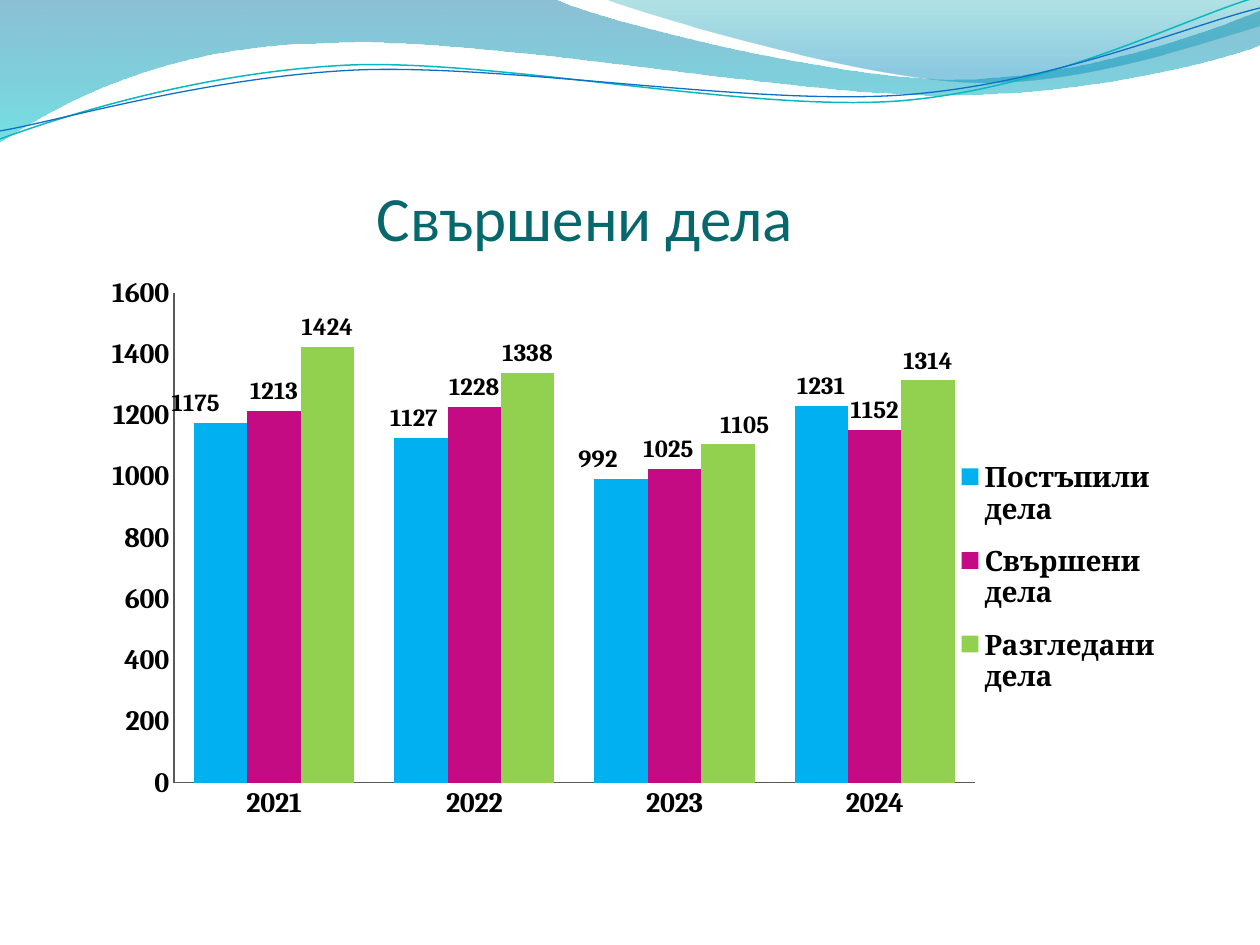
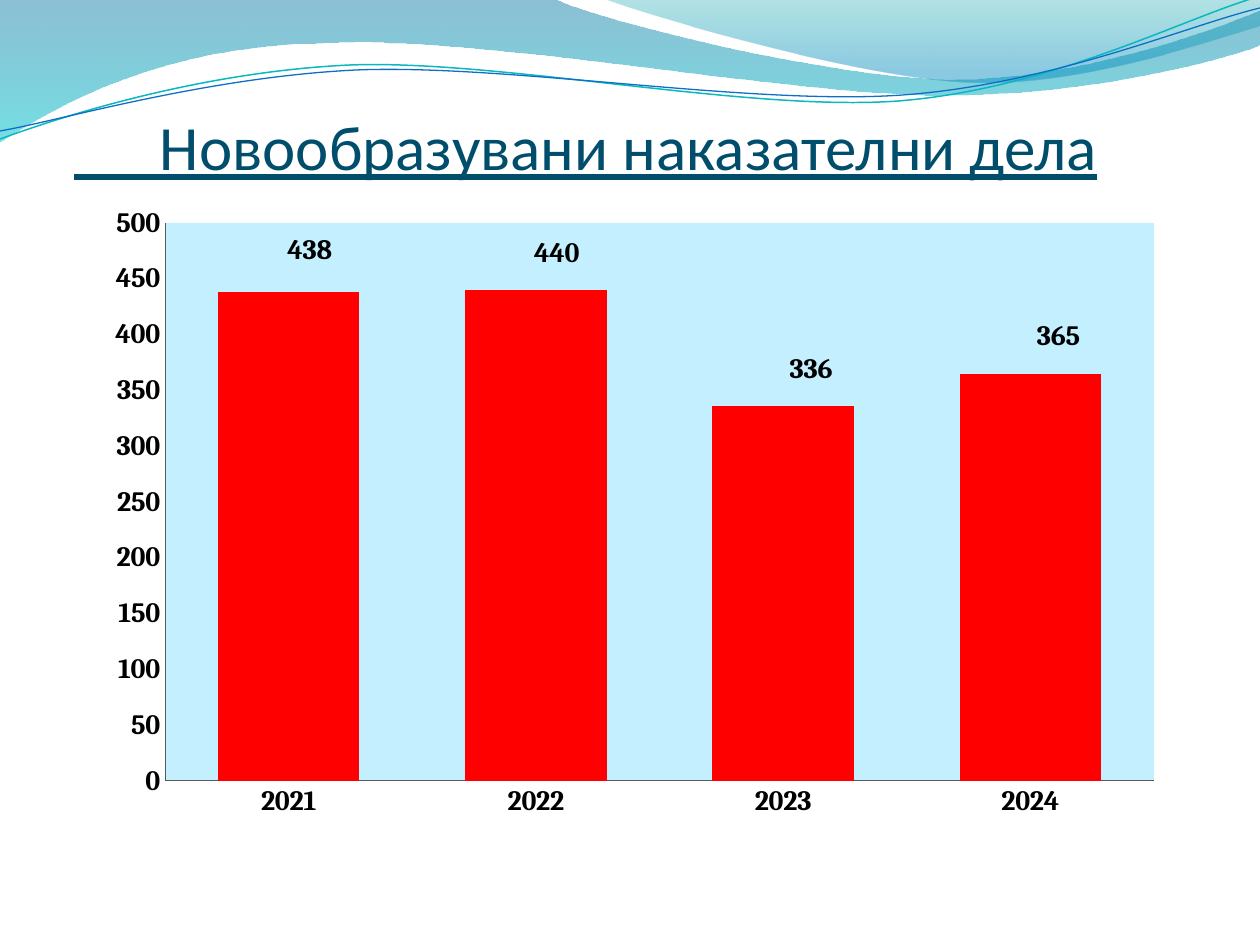
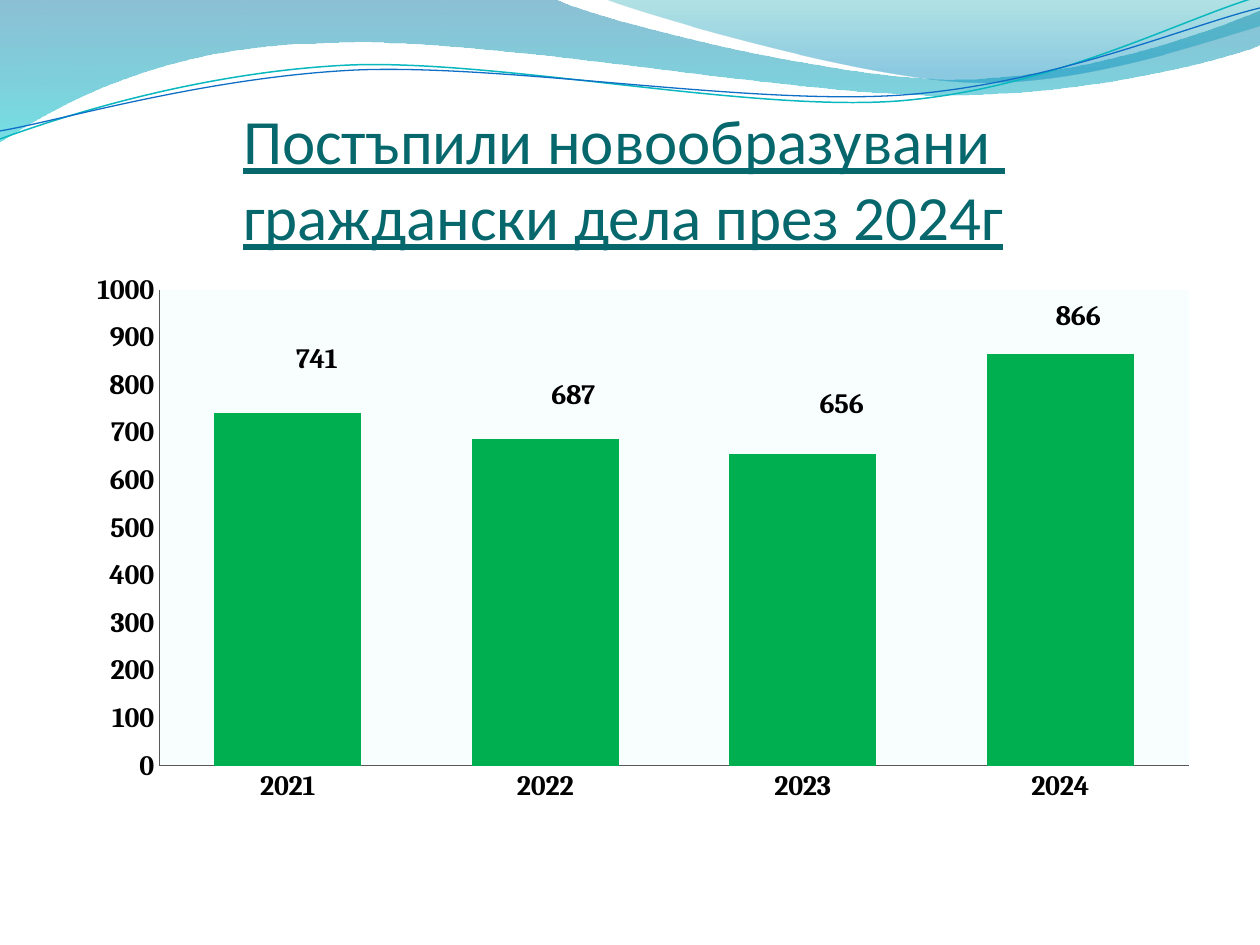
"""Build three slides of court case statistics under a shared wave header."""
from dataclasses import dataclass, field

from lxml import etree
from pptx import Presentation
from pptx.chart.data import CategoryChartData
from pptx.dml.color import RGBColor
from pptx.enum.chart import XL_CHART_TYPE, XL_LABEL_POSITION, XL_LEGEND_POSITION, XL_TICK_MARK
from pptx.enum.shapes import MSO_CONNECTOR
from pptx.enum.text import MSO_ANCHOR
from pptx.oxml import parse_xml
from pptx.oxml.ns import nsdecls, qn
from pptx.util import Emu, Pt

COLUMNS = XL_CHART_TYPE.COLUMN_CLUSTERED
OUTSIDE_END = XL_LABEL_POSITION.OUTSIDE_END
LEGEND_RIGHT = XL_LEGEND_POSITION.RIGHT
NO_TICK = XL_TICK_MARK.NONE
STRAIGHT = MSO_CONNECTOR.STRAIGHT
BOTTOM = MSO_ANCHOR.BOTTOM

EMU_PER_PX = 914400 / 126
TITLE_FONT, CHART_FONT = "Calibri", "Cambria"
TEAL, NAVY, BLACK, AXIS_GREY = "06686C", "004E6C", "000000", "595959"
YEARS = ("2021", "2022", "2023", "2024")

Box = tuple[int, int, int, int]


@dataclass(frozen=True)
class Stop:
    """One gradient stop: position and opacity in percent."""
    at: int
    color: str
    opacity: int


@dataclass(frozen=True)
class Wave:
    """An outline of line points (2 numbers) and Bezier segments (6 numbers)."""
    segments: tuple[tuple[int, ...], ...]
    stops: tuple[Stop, ...] = ()
    line: str = ""
    width: float = 0


@dataclass(frozen=True)
class Title:
    """A slide title whose first line starts after an optional tab."""
    text: str
    box: Box
    color: str
    lead: int = 0
    underline: bool = True


@dataclass(frozen=True)
class Bars:
    """One column series, with label shifts by point index."""
    name: str
    values: tuple[int, ...]
    color: str
    shifts: dict[int, tuple[int, int]] = field(default_factory=dict)


@dataclass(frozen=True)
class ColumnChart:
    """A column chart with its frame, inner plot area and value scale."""
    box: Box
    plot: Box
    top: int
    step: int
    series: tuple[Bars, ...]
    label_size: int = 16
    axis_width: float = 0.5
    plot_fill: str = ""
    legend: Box | None = None


WAVES = (
    Wave(((0, 0), (554, -1), (600, 21, 837, 79, 955, 79), (1075, 79, 1207, 33, 1260, 11),
          (1261, 45), (1239, 55, 1096, 96, 940, 95), (784, 95, 481, 35, 324, 43),
          (163, 45, 58, 105, -1, 142)),
         (Stop(0, "0074A1", 45), Stop(100, "00C6CF", 55))),
    Wave(((604, -1), (641, 14, 859, 78, 969, 82), (1079, 87, 1211, 40, 1260, 26), (1260, 0)),
         (Stop(0, "00A1A9", 30), Stop(80, "008BBF", 45))),
    Wave(((0, 139), (60, 117, 199, 72, 349, 65), (498, 59, 747, 112, 898, 101),
          (1050, 89, 1182, 19, 1257, -3)), line="0AB8BF", width=0.85),
    Wave(((0, 131), (59, 121, 207, 77, 357, 70), (508, 64, 752, 106, 903, 95),
          (1053, 84, 1186, 26, 1260, 8)), line="0F6FC6", width=0.75),
)

SLIDES = (
    (Title("Свършени дела", (63, 96, 1134, 158), TEAL, lead=314, underline=False),
     ColumnChart((63, 267, 1134, 605), (174, 293, 801, 490), 1600, 200, (
         Bars("Постъпили дела", (1175, 1127, 992, 1231), "00B0F0",
              {0: (-25, 0), 1: (-7, 0), 2: (-23, 0)}),
         Bars("Свършени дела", (1213, 1228, 1025, 1152), "C50B83", {2: (-6, 0)}),
         Bars("Разгледани дела", (1424, 1338, 1105, 1314), "92D050", {2: (17, 0)}),
     ), label_size=14, axis_width=0.75, legend=(951, 442, 215, 272))),
    (Title("Новообразувани наказателни дела", (74, 25, 1134, 158), NAVY, lead=86),
     ColumnChart((95, 195, 1081, 635), (165, 223, 989, 558), 500, 50, (
         Bars("Series 1", (438, 440, 336, 365), "FF0000",
              {0: (21, -21), 1: (21, -16), 2: (28, -16), 3: (28, -17)}),
     ), plot_fill="C4EFFF")),
    (Title("Постъпили новообразувани \vграждански дела през 2024г", (243, 95, 775, 158), TEAL),
     ColumnChart((74, 265, 1134, 605), (159, 290, 1030, 476), 1000, 100, (
         Bars("Series 1", (741, 687, 656, 866), "00B050",
              {0: (29, -33), 1: (28, -23), 2: (39, -29), 3: (18, -17)}),
     ), plot_fill="F8FDFE")),
)


def px(n: float) -> Emu:
    """Turn px into EMU."""
    return Emu(round(n * EMU_PER_PX))


def rgb(color: str) -> RGBColor:
    """Turn a hex string into a colour."""
    return RGBColor.from_string(color)


def set_font(font, name: str, size: float, color: str, bold: bool = False) -> None:
    """Set the face, size, colour and weight of a font."""
    font.name, font.size, font.bold = name, Pt(size), bold
    font.color.rgb = rgb(color)


def add_outline(s, wave: Wave):
    """Build a freeform and join the points of each Bezier segment into a curve."""
    points = [(px(x), px(y)) for segment in wave.segments
              for x, y in zip(segment[::2], segment[1::2])]
    builder = s.shapes.build_freeform(*points[0])
    builder.add_line_segments(points[1:], close=bool(wave.stops))
    sp = builder.convert_to_shape()
    lines = iter(list(sp.element.iter(qn("a:lnTo"))))
    for segment in wave.segments[1:]:
        first = next(lines)
        if len(segment) == 6:
            first.tag = qn("a:cubicBezTo")
            for _ in range(2):
                other = next(lines)
                first.append(other[0])
                other.getparent().remove(other)
    return sp


def add_wave(s, wave: Wave) -> None:
    """Draw a gradient band or an open wave line."""
    sp = add_outline(s, wave)
    sp.shadow.inherit = False
    if not wave.stops:
        sp.fill.background()
        sp.line.color.rgb = rgb(wave.line)
        sp.line.width = Pt(wave.width)
        return
    sp.line.fill.background()
    sp.fill.gradient()
    sp.fill.gradient_angle = 270
    for target, stop in zip(sp.fill.gradient_stops, wave.stops):
        target.position = stop.at / 100
        target.color.rgb = rgb(stop.color)
    for color, stop in zip(sp.element.spPr.iter(qn("a:srgbClr")), wave.stops):
        etree.SubElement(color, qn("a:alpha"), val=str(stop.opacity * 1000))


def add_lead_rule(s, title: Title) -> None:
    """Extend the title underline across its leading gap."""
    left, top, _, height = title.box
    y = px(top + height - 6)
    rule = s.shapes.add_connector(STRAIGHT, px(left), y, px(left + title.lead), y)
    rule.line.color.rgb = rgb(title.color)
    rule.line.width = Pt(3.25)
    etree.SubElement(rule._element.spPr, qn("a:effectLst"))


def add_title(s, title: Title) -> None:
    """Write the slide title at the bottom of its box."""
    tf = s.shapes.add_textbox(*map(px, title.box)).text_frame
    tf.word_wrap, tf.vertical_anchor = True, BOTTOM
    tf.margin_left = tf.margin_right = tf.margin_bottom = 0
    tf.margin_top = px(6)
    p = tf.paragraphs[0]
    p.text = ("\t" if title.lead else "") + title.text
    set_font(p.font, TITLE_FONT, 36, title.color)
    p.font.underline = title.underline
    if title.lead:
        tabs = parse_xml(f'<a:tabLst {nsdecls("a")}><a:tab pos="{px(title.lead)}" algn="l"/></a:tabLst>')
        p._p.get_or_add_pPr().insert(0, tabs)
        if title.underline:
            add_lead_rule(s, title)


def put_layout(parent, index: int, values: dict[str, float], inner: bool = False,
               edge: bool = True) -> None:
    """Give a chart part a manual layout in fractions of the chart."""
    for old in parent.findall(qn("c:layout")):
        parent.remove(old)
    layout = parse_xml(f'<c:layout {nsdecls("c")}><c:manualLayout/></c:layout>')
    if inner:
        etree.SubElement(layout[0], qn("c:layoutTarget"), val="inner")
    if edge:
        for mode in ("xMode", "yMode"):
            etree.SubElement(layout[0], qn(f"c:{mode}"), val="edge")
    for key, value in values.items():
        etree.SubElement(layout[0], qn(f"c:{key}"), val=f"{value:.4f}")
    parent.insert(index, layout)


def fractions(box: Box, frame: Box) -> dict[str, float]:
    """Express a box as fractions of its frame."""
    (x, y, w, h), (left, top, width, height) = box, frame
    return {"x": (x - left) / width, "y": (y - top) / height, "w": w / width, "h": h / height}


def style_axis(axis, width: float) -> None:
    """Give an axis bold labels and a plain grey line."""
    axis.has_major_gridlines = False
    axis.major_tick_mark = axis.minor_tick_mark = NO_TICK
    axis.format.line.color.rgb = rgb(AXIS_GREY)
    axis.format.line.width = Pt(width)
    set_font(axis.tick_labels.font, CHART_FONT, 16, BLACK, True)


def hide_leader_lines(labels) -> None:
    """Turn off the lines between bars and shifted labels."""
    element = labels._element
    for old in element.findall(qn("c:showLeaderLines")):
        element.remove(old)
    etree.SubElement(element, qn("c:showLeaderLines"), val="0")
    c15 = "http://schemas.microsoft.com/office/drawing/2012/chart"
    element.append(parse_xml(
        f'<c:extLst {nsdecls("c")}><c:ext uri="{{CE6537A1-D6FC-4f65-9D91-7224C49458BB}}" '
        f'xmlns:c15="{c15}"><c15:showLeaderLines val="0"/></c:ext></c:extLst>'))


def style_series(series, bars: Bars, spec: ColumnChart) -> None:
    """Colour a series, label it and shift single labels."""
    series.invert_if_negative = False
    series.format.fill.solid()
    series.format.fill.fore_color.rgb = rgb(bars.color)
    labels = series.data_labels
    labels.show_value, labels.position = True, OUTSIDE_END
    set_font(labels.font, CHART_FONT, spec.label_size, BLACK, True)
    for i in bars.shifts:
        label = series.points[i].data_label
        set_font(label.font, CHART_FONT, spec.label_size, BLACK, True)
        label.position = OUTSIDE_END
    _, _, width, height = spec.box
    for element, (dx, dy) in zip(series._element.iter(qn("c:dLbl")), bars.shifts.values()):
        put_layout(element, 1, {"x": dx / width, "y": dy / height}, edge=False)
    hide_leader_lines(labels)


def add_columns(s, spec: ColumnChart) -> None:
    """Draw a clustered column chart."""
    data = CategoryChartData()
    data.categories = YEARS
    for bars in spec.series:
        data.add_series(bars.name, bars.values)
    chart = s.shapes.add_chart(COLUMNS, *map(px, spec.box), data).chart
    chart.has_title = False
    set_font(chart.font, CHART_FONT, 10, BLACK)
    plot = chart.plots[0]
    plot.gap_width, plot.vary_by_categories = 75, False
    for series, bars in zip(plot.series, spec.series):
        style_series(series, bars, spec)
    style_axis(chart.category_axis, spec.axis_width)
    axis = chart.value_axis
    style_axis(axis, spec.axis_width)
    axis.minimum_scale, axis.maximum_scale, axis.major_unit = 0, spec.top, spec.step
    area = chart._chartSpace.chart.plotArea
    put_layout(area, 0, fractions(spec.plot, spec.box), inner=True)
    if spec.plot_fill:
        area.append(parse_xml(f'<c:spPr {nsdecls("c", "a")}><a:solidFill>'
                              f'<a:srgbClr val="{spec.plot_fill}"/></a:solidFill></c:spPr>'))
    chart.has_legend = spec.legend is not None
    if spec.legend:
        legend = chart.legend
        legend.position, legend.include_in_layout = LEGEND_RIGHT, False
        set_font(legend.font, CHART_FONT, 16, BLACK, True)
        put_layout(legend._element, 1, fractions(spec.legend, spec.box))


def main() -> None:
    """Build and save the presentation."""
    prs = Presentation()
    prs.slide_width, prs.slide_height = px(1260), px(945)
    for title, chart in SLIDES:
        s = prs.slides.add_slide(prs.slide_layouts[6])
        for wave in WAVES:
            add_wave(s, wave)
        add_title(s, title)
        add_columns(s, chart)
    prs.save("out.pptx")


if __name__ == "__main__":
    main()
